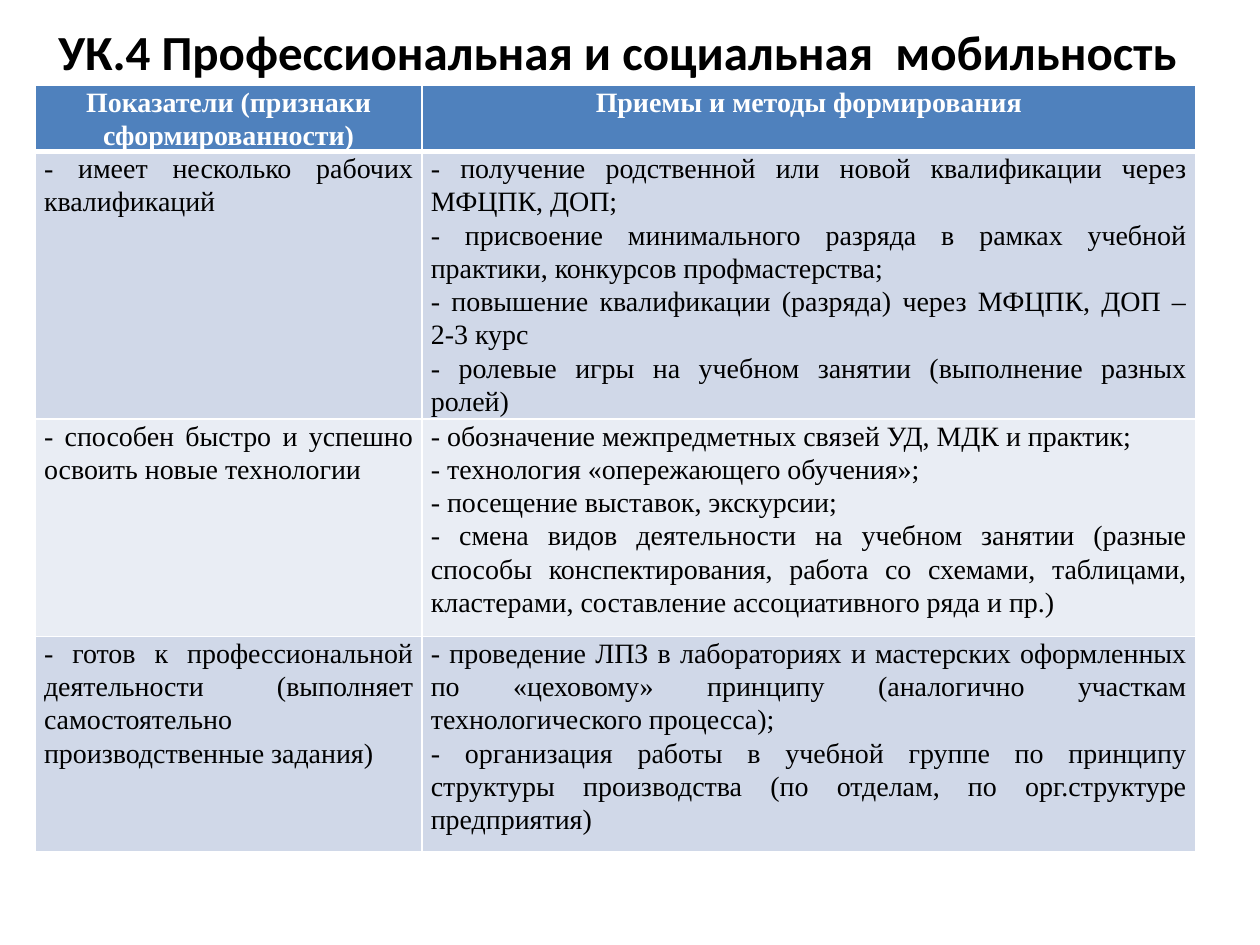
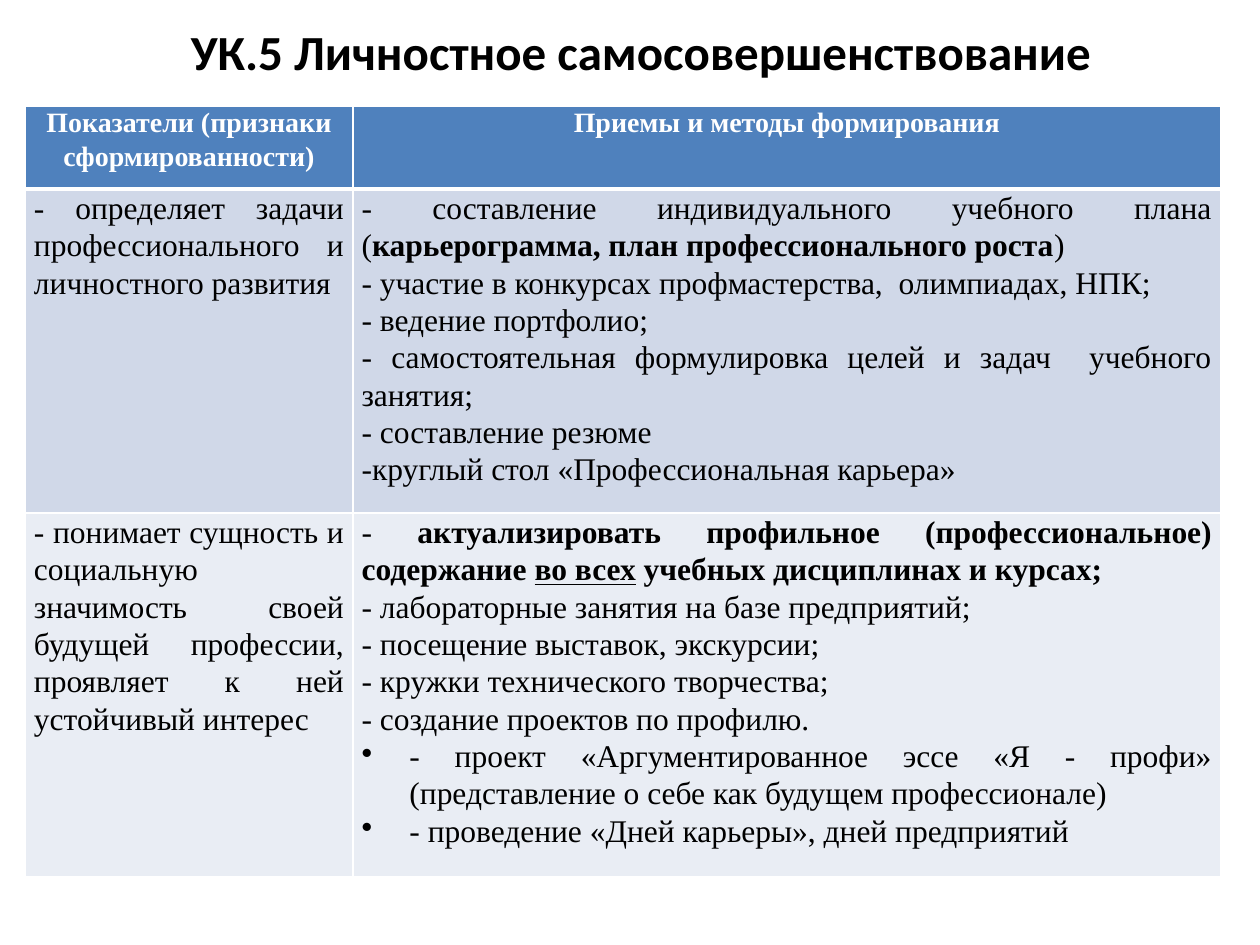
import pptx
import pptx.util
import pptx.dml.color
import pptx.enum.text
import pptx.oxml.ns
import lxml.etree

INK, PAPER, HEADER = "000000", "FFFFFF", "4F81BD"
BANDS = ["D0D8E8", "E9EDF4"]
TITLE_FONT, TABLE_FONT = "Calibri", "Times New Roman"
ALIGN = pptx.enum.text.PP_ALIGN
HEADINGS = ["Показатели (признаки сформированности)", "Приемы и методы формирования"]
BULLET = "•"


def color(hex_string):
    return pptx.dml.color.RGBColor.from_string(hex_string)


def write(paragraph, text, size=16, font=TABLE_FONT, ink=INK, bold=False,
          underline=False, align=ALIGN.JUSTIFY):
    paragraph.alignment = align
    run = paragraph.add_run()
    run.text = text
    run.font.size = pptx.util.Pt(size)
    run.font.name = font
    run.font.bold = bold
    run.font.underline = underline
    run.font.color.rgb = color(ink)


# Content: a cell is a list of paragraphs, a paragraph is a list of (text, format) or a string
mobility = {
    "title": "УК.4 Профессиональная и социальная  мобильность",
    "left": 0.028, "title_width": 0.924, "top": 0.09, "size": 16,
    "columns": [0.307, 0.614], "heights": [0.07, 0.283, 0.23, 0.228],
    "rows": [
        (["- имеет несколько рабочих квалификаций"],
         ["- получение родственной или новой квалификации через МФЦПК, ДОП;",
          "- присвоение минимального разряда в рамках учебной практики, конкурсов профмастерства;",
          "- повышение квалификации (разряда) через МФЦПК, ДОП – 2-3 курс",
          "- ролевые игры на учебном занятии (выполнение разных ролей)"]),
        (["- способен быстро и успешно освоить новые технологии"],
         ["- обозначение межпредметных связей УД, МДК и практик;",
          "- технология «опережающего обучения»;",
          "- посещение выставок, экскурсии;",
          "- смена видов деятельности на учебном занятии (разные способы конспектирования, "
          "работа со схемами, таблицами, кластерами, составление ассоциативного ряда и пр.)"]),
        (["- готов к профессиональной деятельности (выполняет самостоятельно "
          "производственные задания)"],
         ["- проведение ЛПЗ в лабораториях и мастерских оформленных по «цеховому» принципу "
          "(аналогично участкам технологического процесса);",
          "- организация работы в учебной группе по принципу структуры производства "
          "(по отделам, по орг.структуре предприятия)"]),
    ],
}
self_improvement = {
    "title": "УК.5 Личностное самосовершенствование",
    "left": 0.02, "title_width": 0.977, "top": 0.112, "size": 18,
    "columns": [0.26, 0.689], "heights": [0.088, 0.343, 0.385],
    "rows": [
        (["- определяет задачи профессионального и личностного развития"],
         [[("- составление индивидуального учебного плана (", {}),
           ("карьерограмма, план профессионального роста", {"bold": True}),
           (")", {})],
          "- участие в конкурсах профмастерства,  олимпиадах, НПК;",
          "- ведение портфолио;",
          "- самостоятельная формулировка целей и задач  учебного занятия;",
          "- составление резюме",
          "-круглый стол «Профессиональная карьера»"]),
        (["- понимает сущность и социальную значимость своей будущей профессии, "
          "проявляет к ней устойчивый интерес"],
         [[("- ", {}),
           ("актуализировать профильное (профессиональное) содержание ", {"bold": True}),
           ("во всех", {"bold": True, "underline": True}),
           (" учебных дисциплинах и курсах;", {"bold": True})],
          "- лабораторные занятия на базе предприятий;",
          "- посещение выставок, экскурсии;",
          "- кружки технического творчества;",
          "- создание проектов по профилю.",
          BULLET + "- проект «Аргументированное эссе «Я - профи» "
          "(представление о себе как будущем профессионале)",
          BULLET + "- проведение «Дней карьеры», дней предприятий"]),
    ],
}

deck = pptx.Presentation()
deck.slide_width, deck.slide_height = pptx.util.Inches(10), pptx.util.Inches(7.5)
W, H = deck.slide_width, deck.slide_height

for topic in [mobility, self_improvement]:
    slide = deck.slides.add_slide(deck.slide_layouts[5])
    left = int(topic["left"] * W)

    # Title
    title = slide.shapes.title
    title.left, title.top = left, int(0.017 * H)
    title.width, title.height = int(topic["title_width"] * W), int(0.073 * H)
    title.text_frame.auto_size = pptx.enum.text.MSO_AUTO_SIZE.NONE
    title.text_frame.vertical_anchor = pptx.enum.text.MSO_ANCHOR.MIDDLE
    write(title.text_frame.paragraphs[0], topic["title"], size=28, font=TITLE_FONT,
          bold=True, align=ALIGN.CENTER)

    # Table grid
    grid_rows = [[[heading] for heading in HEADINGS]] + topic["rows"]
    table = slide.shapes.add_table(
        len(grid_rows), len(HEADINGS), left, int(topic["top"] * H),
        int(sum(topic["columns"]) * W), int(sum(topic["heights"]) * H)).table
    for column, share in zip(table.columns, topic["columns"]):
        column.width = int(share * W)
    for row, share in zip(table.rows, topic["heights"]):
        row.height = int(share * H)

    for r, contents in enumerate(grid_rows):
        is_header = r == 0
        for c, paragraphs in enumerate(contents):
            cell = table.cell(r, c)
            cell.margin_left = cell.margin_right = pptx.util.Inches(0.07)
            cell.margin_top = cell.margin_bottom = 0

            # White borders, thicker between the header and the body
            properties = cell._tc.get_or_add_tcPr()
            for side in "LRTB":
                thick = (is_header and side == "B") or (r == 1 and side == "T")
                line = lxml.etree.SubElement(
                    properties, pptx.oxml.ns.qn("a:ln" + side),
                    w=str(pptx.util.Pt(3 if thick else 1)))
                fill = lxml.etree.SubElement(line, pptx.oxml.ns.qn("a:solidFill"))
                lxml.etree.SubElement(fill, pptx.oxml.ns.qn("a:srgbClr"), val=PAPER)
            cell.fill.solid()
            cell.fill.fore_color.rgb = color(HEADER if is_header else BANDS[(r - 1) % 2])

            # Cell text
            if is_header:
                style = {"ink": PAPER, "bold": True, "align": ALIGN.CENTER}
            else:
                style = {"size": topic["size"]}
            for i, content in enumerate(paragraphs):
                frame = cell.text_frame
                paragraph = frame.add_paragraph() if i else frame.paragraphs[0]
                paragraph.line_spacing = 1.07
                if content[0] == BULLET:
                    content = content[1:]
                    layout = paragraph._p.get_or_add_pPr()
                    indent = pptx.util.Inches(0.38)
                    layout.set("marL", str(indent))
                    layout.set("indent", str(-indent))
                    lxml.etree.SubElement(layout, pptx.oxml.ns.qn("a:buChar"), char=BULLET)
                    tabs = lxml.etree.SubElement(layout, pptx.oxml.ns.qn("a:tabLst"))
                    lxml.etree.SubElement(tabs, pptx.oxml.ns.qn("a:tab"),
                                          pos=str(pptx.util.Inches(0.5)), algn="l")
                runs = [(content, {})] if isinstance(content, str) else content
                for text, emphasis in runs:
                    write(paragraph, text, **{**style, **emphasis})

deck.save("out.pptx")
